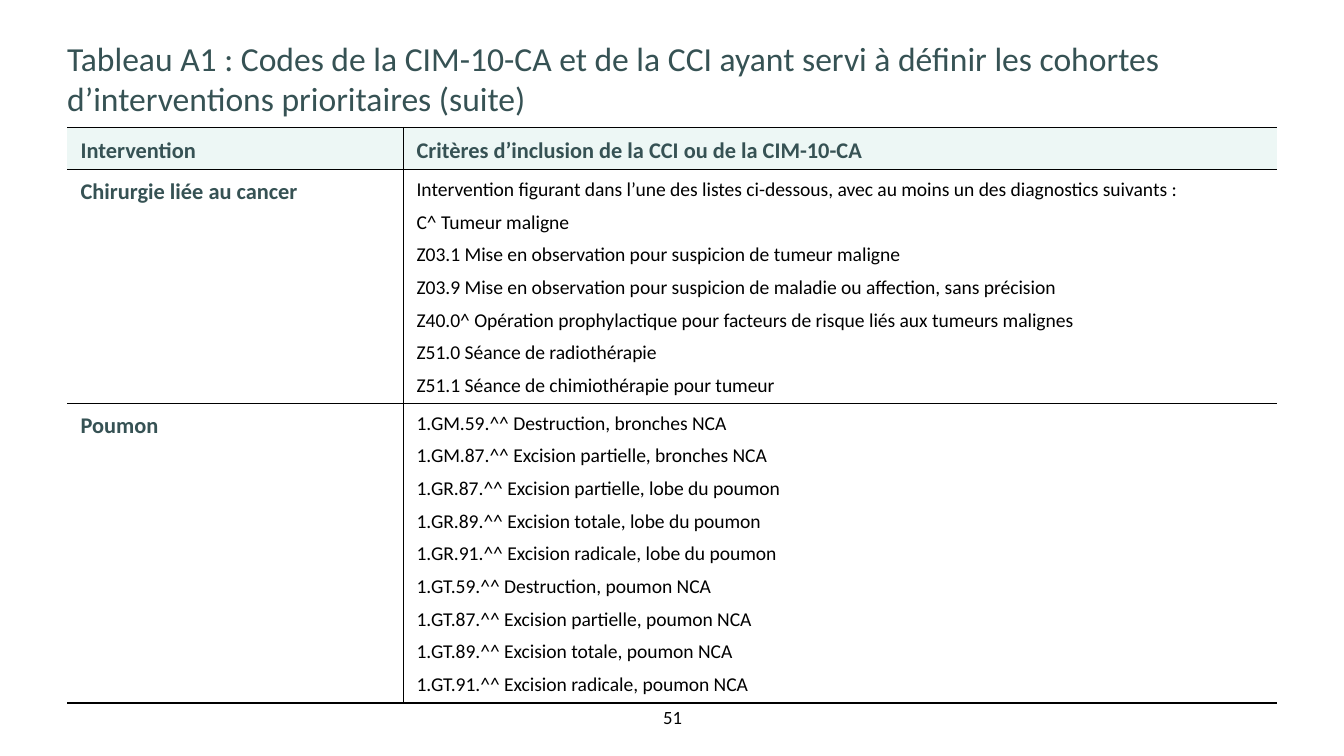
from lxml.etree import SubElement
from pptx import Presentation
from pptx.dml.color import RGBColor
from pptx.enum.text import MSO_ANCHOR as Anchor, PP_ALIGN as Align
from pptx.oxml.ns import qn
from pptx.util import Inches, Pt

# Content
TITLE = ("Tableau A1 : Codes de la CIM-10-CA et de la CCI ayant servi à définir "
         "les cohortes d’interventions prioritaires (suite)")
PAGE_NUMBER = "51"
HEADER = ("Intervention", ["Critères d’inclusion de la CCI ou de la CIM-10-CA"])
INTERVENTIONS = [
    ("Chirurgie liée au cancer", [
        "Intervention figurant dans l’une des listes ci-dessous, "
        "avec au moins un des diagnostics suivants :",
        "C^ Tumeur maligne",
        "Z03.1 Mise en observation pour suspicion de tumeur maligne",
        "Z03.9 Mise en observation pour suspicion de maladie ou affection, sans précision",
        "Z40.0^ Opération prophylactique pour facteurs de risque liés aux tumeurs malignes",
        "Z51.0 Séance de radiothérapie",
        "Z51.1 Séance de chimiothérapie pour tumeur",
    ]),
    ("Poumon", [
        "1.GM.59.^^ Destruction, bronches NCA",
        "1.GM.87.^^ Excision partielle, bronches NCA",
        "1.GR.87.^^ Excision partielle, lobe du poumon",
        "1.GR.89.^^ Excision totale, lobe du poumon",
        "1.GR.91.^^ Excision radicale, lobe du poumon",
        "1.GT.59.^^ Destruction, poumon NCA",
        "1.GT.87.^^ Excision partielle, poumon NCA",
        "1.GT.89.^^ Excision totale, poumon NCA",
        "1.GT.91.^^ Excision radicale, poumon NCA",
    ]),
]

# Look and layout: a 16:9 slide
FONT = "Calibri"
GREEN, MINT, BLACK, WHITE = "365254", "EDF7F5", "000000", "FFFFFF"
WIDTH, MARGIN = 10, 0.5
HEIGHT = WIDTH * 9 / 16
CONTENT_WIDTH = WIDTH - 2 * MARGIN
COLUMN_WIDTHS = (2.5, CONTENT_WIDTH - 2.5)
ROW_HEIGHTS = (0.31, 1.74, 2.23)
TABLE_TOP = 0.95
THICK, THIN = 1, 0.5


def color(value):
    return RGBColor.from_string(value)


def style(paragraph, size, font_color, bold=False):
    for run in paragraph.runs:
        run.font.name, run.font.size, run.font.bold = FONT, Pt(size), bold
        run.font.color.rgb = color(font_color)


def add_text(slide, text, box, size, font_color, align, anchor):
    shape = slide.shapes.add_textbox(*map(Inches, box))
    frame = shape.text_frame
    frame.word_wrap, frame.vertical_anchor = True, anchor
    frame.margin_left = frame.margin_right = frame.margin_top = frame.margin_bottom = 0
    frame.text = text
    frame.paragraphs[0].alignment = align
    style(frame.paragraphs[0], size, font_color)


def set_borders(cell, **widths):
    properties = cell._tc.get_or_add_tcPr()
    for side in "LRTB":
        width = widths.get(side, 0)
        line = SubElement(properties, qn(f"a:ln{side}"), w=str(int(Pt(width))))
        if width:
            fill = SubElement(line, qn("a:solidFill"))
            SubElement(fill, qn("a:srgbClr"), val=BLACK)
        else:
            SubElement(line, qn("a:noFill"))


def fill_cell(cell, lines, size, font_color, bold, background, anchor):
    cell.fill.solid()
    cell.fill.fore_color.rgb = color(background)
    cell.margin_left = cell.margin_right = Inches(0.1)
    cell.margin_top = cell.margin_bottom = Inches(0.04)
    cell.vertical_anchor = anchor
    cell.text_frame.text = "\n".join(lines)
    for index, paragraph in enumerate(cell.text_frame.paragraphs):
        paragraph.line_spacing = 1.14
        paragraph.space_before = Pt(3 if index else 0)
        style(paragraph, size, font_color, bold)


def add_codes_table(slide):
    rows = [HEADER, *INTERVENTIONS]
    table = slide.shapes.add_table(
        len(rows), len(COLUMN_WIDTHS), Inches(MARGIN), Inches(TABLE_TOP),
        Inches(CONTENT_WIDTH), Inches(sum(ROW_HEIGHTS))).table
    table.first_row = table.horz_banding = False
    for column, width in zip(table.columns, COLUMN_WIDTHS):
        column.width = Inches(width)
    for row, height in zip(table.rows, ROW_HEIGHTS):
        row.height = Inches(height)

    for index, (name, criteria) in enumerate(rows):
        is_header = index == 0
        background = MINT if is_header else WHITE
        anchor = Anchor.MIDDLE if is_header else Anchor.TOP
        top = THICK if is_header else THIN
        bottom = THICK if index == len(rows) - 1 else THIN
        label, detail = table.cell(index, 0), table.cell(index, 1)
        set_borders(label, T=top, B=bottom, R=THIN)
        set_borders(detail, T=top, B=bottom, L=THIN)
        fill_cell(label, [name], 12, GREEN, True, background, anchor)
        size, font_color = (12, GREEN) if is_header else (10.5, BLACK)
        fill_cell(detail, criteria, size, font_color, is_header, background, anchor)


def main():
    presentation = Presentation()
    presentation.slide_width, presentation.slide_height = Inches(WIDTH), Inches(HEIGHT)
    slide = presentation.slides.add_slide(presentation.slide_layouts[6])

    # Page number, title, table
    add_text(slide, PAGE_NUMBER, (4.69, 5.25, 0.63, 0.17), 10, BLACK,
             Align.CENTER, Anchor.MIDDLE)
    add_text(slide, TITLE, (MARGIN, 0.28, CONTENT_WIDTH, 0.61), 18, GREEN,
             Align.LEFT, Anchor.TOP)
    add_codes_table(slide)
    presentation.save("out.pptx")


if __name__ == "__main__":
    main()
